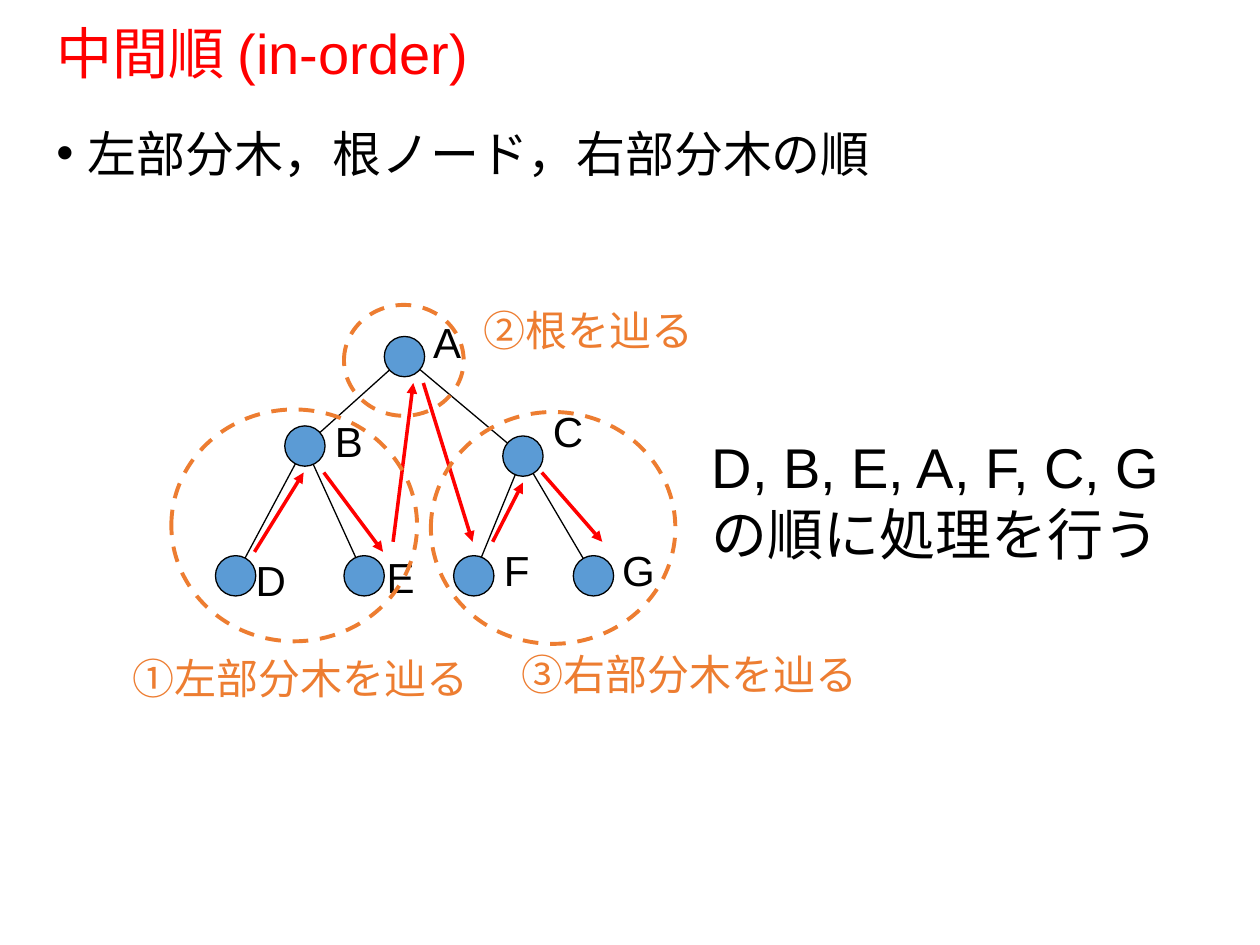
from lxml.etree import SubElement
from pptx import Presentation
from pptx.dml.color import RGBColor
from pptx.enum.dml import MSO_LINE
from pptx.enum.shapes import MSO_CONNECTOR, MSO_SHAPE
from pptx.enum.text import MSO_ANCHOR, MSO_AUTO_SIZE, PP_ALIGN
from pptx.oxml.ns import qn
from pptx.util import Inches, Pt

COLORS = {"text": "000000", "accent": "FF0000", "node": "5B9BD5", "group": "ED7D31"}
NODE_SIZE = 0.32

# name: (node centre, label left and top)
NODES = {
    "A": ((3.21, 2.83), (3.34, 2.46)),
    "B": ((2.42, 3.54), (2.56, 3.25)),
    "C": ((4.15, 3.62), (4.29, 3.17)),
    "D": ((1.87, 4.57), (1.93, 4.35)),
    "E": ((2.89, 4.57), (2.97, 4.33)),
    "F": ((3.76, 4.57), (3.9, 4.27)),
    "G": ((4.71, 4.57), (4.84, 4.27)),
}
EDGES = ["AB", "AC", "BD", "BE", "CF", "CG"]
VISITS = [
    ((2.02, 4.38), (2.41, 3.75)),
    ((2.57, 3.75), (3.04, 4.38)),
    ((3.12, 4.3), (3.28, 3.04)),
    ((3.36, 3.04), (3.75, 4.3)),
    ((3.91, 4.3), (4.15, 3.83)),
    ((4.3, 3.75), (4.78, 4.3)),
]
# step text, its box, ring box
STEPS = [
    ("①左部分木を辿る", (0.95, 5.13, 2.89, 0.5), (1.36, 3.25, 1.95, 1.84)),
    ("②根を辿る", (3.74, 2.37, 1.88, 0.5), (2.73, 2.42, 0.95, 0.88)),
    ("③右部分木を辿る", (4.04, 5.1, 2.89, 0.5), (3.42, 3.27, 1.94, 1.84)),
]


def rgb(name):
    return RGBColor.from_string(COLORS[name])


def inches(values):
    return [Inches(v) for v in values]


def write(tf, lines, size, color="text", wrap=False):
    tf.word_wrap = wrap
    tf.auto_size = MSO_AUTO_SIZE.NONE
    for i, line in enumerate(lines):
        p = tf.add_paragraph() if i else tf.paragraphs[0]
        p.alignment = PP_ALIGN.LEFT
        r = p.add_run()
        r.text = line
        for key, value in {"name": "Arial", "size": Pt(size)}.items():
            setattr(r.font, key, value)
        r.font.color.rgb = rgb(color)


def add_title(slide, text, box):
    sp = slide.shapes.title
    sp.left, sp.top, sp.width, sp.height = inches(box)
    write(sp.text_frame, [text], 32, "accent", wrap=True)
    sp.text_frame.vertical_anchor = MSO_ANCHOR.MIDDLE
    sp.text_frame.paragraphs[0].line_spacing = 0.9


def add_text(slide, lines, box, size, color="text", wrap=False):
    tf = slide.shapes.add_textbox(*inches(box)).text_frame
    write(tf, lines, size, color, wrap)
    return tf


def add_bullet(slide, text, box):
    tf = add_text(slide, [text], box, 28, wrap=True)
    pPr = tf.paragraphs[0]._p.get_or_add_pPr()
    pPr.set("marL", str(Inches(0.25)))
    pPr.set("indent", str(Inches(-0.25)))
    SubElement(pPr, qn("a:buFont"), typeface="Arial")
    SubElement(pPr, qn("a:buChar"), char="•")


def add_line(slide, start, end, color="text", width=0.75, arrow=False):
    line = slide.shapes.add_connector(MSO_CONNECTOR.STRAIGHT, *inches(start + end))
    line.line.color.rgb = rgb(color)
    line.line.width = Pt(width)
    if arrow:
        SubElement(line.line._get_or_add_ln(), qn("a:tailEnd"), type="triangle")
    SubElement(line._element.spPr, qn("a:effectLst"))


def add_ellipse(slide, box, line_color, width, fill=None):
    sp = slide.shapes.add_shape(MSO_SHAPE.OVAL, *inches(box))
    sp.shadow.inherit = False
    if fill:
        sp.fill.solid()
        sp.fill.fore_color.rgb = rgb(fill)
    else:
        sp.fill.background()
    sp.line.color.rgb = rgb(line_color)
    sp.line.width = Pt(width)
    return sp


def add_tree(slide):
    for parent, child in EDGES:
        add_line(slide, NODES[parent][0], NODES[child][0])
    for (x, y), _ in NODES.values():
        half = NODE_SIZE / 2
        add_ellipse(slide, (x - half, y - half, NODE_SIZE, NODE_SIZE), "text", 0.75, "node")
    for name, (_, corner) in NODES.items():
        add_text(slide, [name], corner + (0.44, 0.5), 24)


def add_step(slide, text, text_box, ring_box):
    ring = add_ellipse(slide, ring_box, "group", 2.25)
    ring.line.dash_style = MSO_LINE.DASH
    add_text(slide, [text], text_box, 24, "group")


def main():
    prs = Presentation()
    prs.slide_width, prs.slide_height = Inches(10), Inches(7.5)
    slide = prs.slides.add_slide(prs.slide_layouts[5])
    add_title(slide, "中間順 (in-order)", (0.35, 0.19, 9.25, 0.51))
    add_bullet(slide, "左部分木，根ノード，右部分木の順", (0.35, 0.93, 8.73, 1.22))
    add_tree(slide)
    add_text(slide, ["D, B, E, A, F, C, G", "の順に処理を行う"], (5.55, 3.38, 3.79, 1.18), 32)
    for start, end in VISITS:
        add_line(slide, start, end, "accent", 2, arrow=True)
    for step in STEPS:
        add_step(slide, *step)
    prs.save("out.pptx")


if __name__ == "__main__":
    main()
